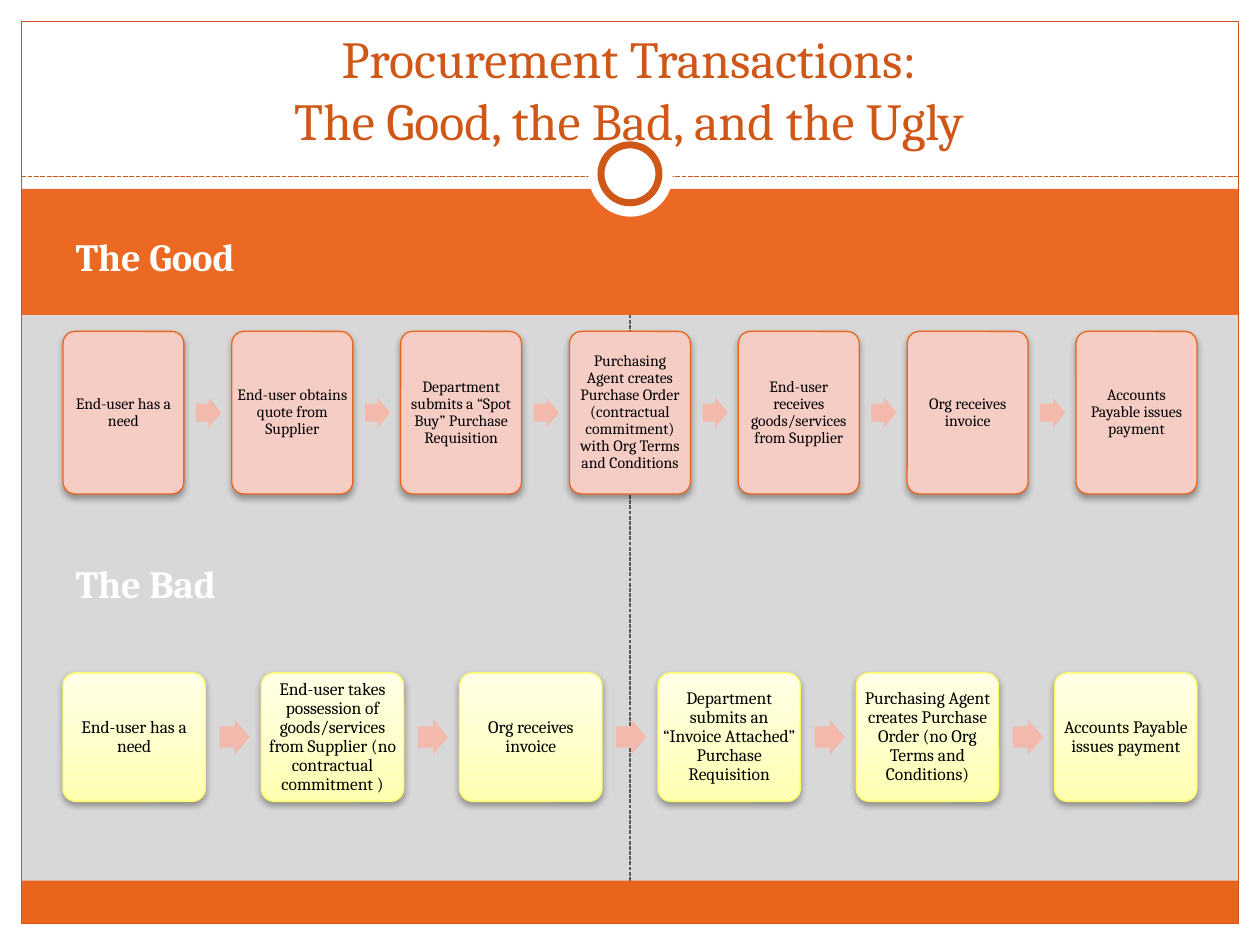
import copy
from dataclasses import dataclass

import pptx
import pptx.dml.color
import pptx.enum.dml
import pptx.enum.shapes
import pptx.enum.text
import pptx.oxml
import pptx.oxml.ns
import pptx.util

Inches = pptx.util.Inches
Pt = pptx.util.Pt
SHAPE = pptx.enum.shapes.MSO_SHAPE
ALIGN = pptx.enum.text.PP_ALIGN
ANCHOR = pptx.enum.text.MSO_ANCHOR
DRAWING_NS = pptx.oxml.ns.nsdecls("a")

FONT = "Cambria"
WHITE, BLACK = "FFFFFF", "000000"
ORANGE, RUST, ARROW_PINK = "EB641B", "CF5818", "F3B9AC"
MARGIN, CONTENT_WIDTH = 0.5, 9

CARD_FRAME = {
    "word_wrap": True,
    "vertical_anchor": ANCHOR.MIDDLE,
    **{f"margin_{side}": Inches(0.01) for side in ("left", "top", "right", "bottom")},
}
CARD_PARAGRAPH = {"alignment": ALIGN.CENTER, "line_spacing": 0.9}
CARD_SHADOW = (
    f'<a:effectLst {DRAWING_NS}><a:outerShdw blurRad="50800" dist="25400" dir="5400000" '
    'rotWithShape="0"><a:srgbClr val="000000"><a:alpha val="35000"/></a:srgbClr>'
    "</a:outerShdw></a:effectLst>"
)


@dataclass(frozen=True)
class Panel:
    box: tuple[float, float, float, float]
    fill: str | None = None
    line: str | None = None
    weight: float = 0.75
    kind: SHAPE = SHAPE.RECTANGLE


@dataclass(frozen=True)
class Process:
    steps: tuple[str, ...]
    top: float
    width: float
    height: float
    arrow_width: float
    arrow_height: float
    size: float
    fills: tuple[str, ...]
    line: str


@dataclass(frozen=True)
class Heading:
    index: int
    text: str
    box: tuple[float, float, float, float]
    size: float
    color: str
    bold: bool
    anchor: ANCHOR
    alignment: ALIGN


def rgb(value: str):
    return pptx.dml.color.RGBColor.from_string(value)


def apply(target, values: dict) -> None:
    for name, value in values.items():
        setattr(target, name, value)


def write(frame, text: str, size: float, color: str, bold: bool, paragraph_format: dict) -> None:
    frame.text = text
    paragraph = frame.paragraphs[0]
    apply(paragraph, paragraph_format)
    for run in paragraph.runs:
        apply(run.font, {"name": FONT, "size": Pt(size), "bold": bold})
        run.font.color.rgb = rgb(color)


def draw_panel(slide, panel: Panel):
    shape = slide.shapes.add_shape(panel.kind, *map(Inches, panel.box))
    shape.shadow.inherit = False
    if panel.fill:
        shape.fill.solid()
        shape.fill.fore_color.rgb = rgb(panel.fill)
    else:
        shape.fill.background()
    if panel.line:
        shape.line.color.rgb = rgb(panel.line)
        shape.line.width = Pt(panel.weight)
    else:
        shape.line.fill.background()
    return shape


def draw_rule(slide, ends: tuple[float, ...], color: str, weight: float):
    rule = slide.shapes.add_connector(pptx.enum.shapes.MSO_CONNECTOR.STRAIGHT, *map(Inches, ends))
    rule.line.color.rgb = rgb(color)
    apply(rule.line, {"width": Pt(weight), "dash_style": pptx.enum.dml.MSO_LINE.SQUARE_DOT})
    rule.element.spPr.append(pptx.oxml.parse_xml(f"<a:effectLst {DRAWING_NS}/>"))
    return rule


def shade(card, colors: tuple[str, ...]) -> None:
    card.fill.gradient()
    card.fill.gradient_angle = 90
    stop_list = card.element.spPr.find(".//" + pptx.oxml.ns.qn("a:gsLst"))
    for _ in colors[2:]:
        stop_list.append(copy.deepcopy(stop_list[-1]))
    for order, (stop, color) in enumerate(zip(card.fill.gradient_stops, colors)):
        stop.color.rgb = rgb(color)
        stop.position = order / (len(colors) - 1)


def draw_process(slide, process: Process) -> None:
    pitch = (CONTENT_WIDTH - process.width) / (len(process.steps) - 1)
    arrow_top = process.top + (process.height - process.arrow_height) / 2
    for order, step in enumerate(process.steps):
        left = MARGIN + order * pitch
        card = draw_panel(slide, Panel((left, process.top, process.width, process.height),
                                       process.fills[0], process.line, kind=SHAPE.ROUNDED_RECTANGLE))
        card.adjustments[0] = 0.1
        if len(process.fills) > 1:
            shade(card, process.fills)
        properties = card.element.spPr
        properties.remove(properties.find(pptx.oxml.ns.qn("a:effectLst")))
        properties.append(pptx.oxml.parse_xml(CARD_SHADOW))
        apply(card.text_frame, CARD_FRAME)
        write(card.text_frame, step, process.size, BLACK, False, CARD_PARAGRAPH)
        if order < len(process.steps) - 1:
            arrow = draw_panel(slide, Panel(
                (left + process.width * 1.1, arrow_top, process.arrow_width, process.arrow_height),
                ARROW_PINK, kind=SHAPE.RIGHT_ARROW))
            arrow.adjustments[0] = 0.6
            arrow.adjustments[1] = 0.5


def place_heading(slide, heading: Heading) -> None:
    holder = next(p for p in slide.placeholders if p.placeholder_format.idx == heading.index)
    apply(holder, dict(zip(("left", "top", "width", "height"), map(Inches, heading.box))))
    apply(holder.text_frame, {"word_wrap": True, "vertical_anchor": heading.anchor,
                              "auto_size": pptx.enum.text.MSO_AUTO_SIZE.NONE})
    write(holder.text_frame, heading.text, heading.size, heading.color, heading.bold,
          {"alignment": heading.alignment})
    holder.element.getparent().append(holder.element)


PANELS = (
    Panel((0, 0, 10, 1.58), WHITE),
    Panel((0, 7.33, 10, 0.17), WHITE),
    Panel((0, 0, 0.17, 7.5), WHITE),
    Panel((9.83, 0, 0.17, 7.5), WHITE),
    Panel((0.17, 1.5, 9.66, 1), "EB6923"),
)
FOOTER = Panel((0.17, 6.99, 9.66, 0.34), ORANGE)
ORNAMENTS = (
    Panel((0.17, 0.17, 9.66, 7.16), line=RUST),
    Panel((4.67, 1.05, 0.67, 0.67), WHITE, kind=SHAPE.OVAL),
    Panel((4.77, 1.15, 0.46, 0.46), WHITE, RUST, 4, SHAPE.OVAL),
)
HEADINGS = (
    Heading(0, "Procurement Transactions:\vThe Good, the Bad, and the Ugly",
            (0.33, 0.42, 9.33, 0.83), 29.7, RUST, False, ANCHOR.BOTTOM, ALIGN.CENTER),
    Heading(3, "The Bad", (0.5, 4.25, 9, 0.75), 22, WHITE, True, ANCHOR.MIDDLE, ALIGN.LEFT),
    Heading(1, "The Good", (0.5, 1.68, 9, 0.7), 22, WHITE, True, ANCHOR.MIDDLE, ALIGN.LEFT),
)
GOOD = Process((
    "End-user has a need",
    "End-user obtains quote from Supplier",
    "Department submits a “Spot Buy” Purchase Requisition",
    "Purchasing Agent creates Purchase Order (contractual commitment) with Org Terms and Conditions",
    "End-user receives goods/services from Supplier",
    "Org receives invoice",
    "Accounts Payable issues payment",
), 2.63, 0.96, 1.29, 0.2, 0.24, 9, ("F6CDC5",), ORANGE)
BAD = Process((
    "End-user has a need",
    "End-user takes possession of goods/services from Supplier (no contractual commitment )",
    "Org receives invoice",
    "Department submits an “Invoice Attached” Purchase Requisition",
    "Purchasing Agent creates Purchase Order (no Org Terms and Conditions)",
    "Accounts Payable issues payment",
), 5.34, 1.13, 1.02, 0.24, 0.28, 10, ("FFFFAF", "FFFFCE", "FFFFE7"), "FFFF66")


def main() -> None:
    deck = pptx.Presentation()
    apply(deck, {"slide_width": Inches(10), "slide_height": Inches(7.5)})
    slide = deck.slides.add_slide(deck.slide_layouts[4])
    slide.background.fill.solid()
    slide.background.fill.fore_color.rgb = rgb("D8D8D8")
    divider = draw_rule(slide, (5, 6.99, 5, 2.41), "595959", 0.75)
    for panel in PANELS:
        draw_panel(slide, panel)
    divider.begin_connect(draw_panel(slide, FOOTER), 0)
    draw_rule(slide, (0.17, 1.4, 9.83, 1.4), RUST, 0.9)
    for ornament in ORNAMENTS:
        draw_panel(slide, ornament)
    for heading in HEADINGS:
        place_heading(slide, heading)
    for holder in list(slide.placeholders):
        if not holder.text_frame.text:
            holder.element.getparent().remove(holder.element)
    for process in (GOOD, BAD):
        draw_process(slide, process)
    deck.save("out.pptx")


if __name__ == "__main__":
    main()
